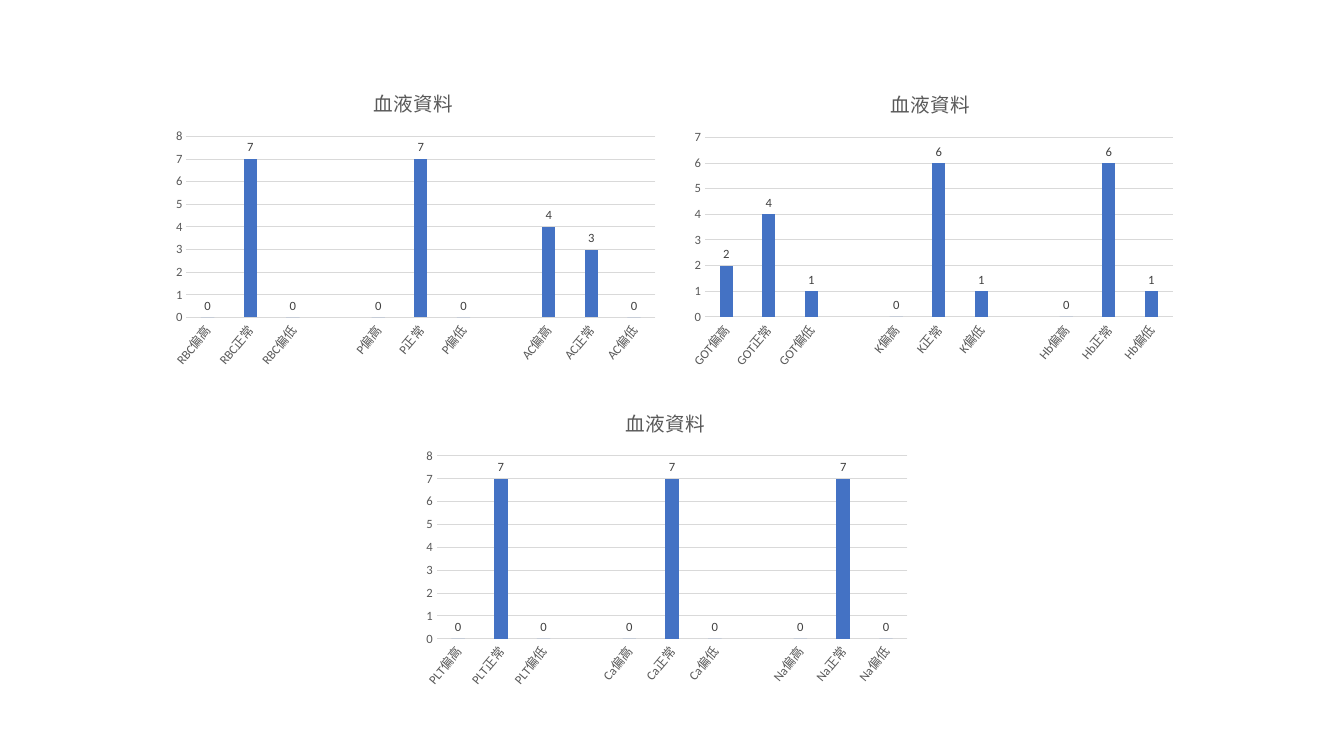
from dataclasses import dataclass
from itertools import product

from pptx import Presentation
from pptx.chart.data import CategoryChartData as ChartData
from pptx.dml.color import RGBColor as Rgb
from pptx.enum.chart import XL_CHART_TYPE as Kind
from pptx.enum.chart import XL_LABEL_POSITION as Spot
from pptx.enum.chart import XL_TICK_MARK as Tick
from pptx.util import Inches, Pt


@dataclass(frozen=True)
class Theme:
    """Colours, font, type sizes and label tilt of the slide."""
    face: str = "Calibri"
    bar: str = "4472C4"
    grid: str = "D9D9D9"
    text: str = "595959"
    label: str = "404040"
    head: float = 14
    base: float = 10
    small: float = 9
    tilt: int = -50


THEME = Theme()
SIZE = (13.33, 7.5)
CHART = (5, 3)
TITLE = "血液資料"
LEVELS = ("偏高", "正常", "偏低")
PANELS = (
    ((1.6, 0.71), {"RBC": (0, 7, 0), "P": (0, 7, 0), "AC": (4, 3, 0)}),
    ((6.73, 0.72), {"GOT": (2, 4, 1), "K": (0, 6, 1), "Hb": (0, 6, 1)}),
    ((4.1, 3.88), {"PLT": (0, 7, 0), "Ca": (0, 7, 0), "Na": (0, 7, 0)}),
)


def style(font, size, color):
    """Set the face, size and colour of a font."""
    font.name, font.size, font.bold = THEME.face, Pt(size), False
    font.color.rgb = Rgb.from_string(color)


def rule(line):
    """Draw a line in the thin grid style."""
    line.color.rgb = Rgb.from_string(THEME.grid)
    line.width = Pt(0.75)


def table(tests):
    """Turn tests into chart data, with an empty slot between tests."""
    data = ChartData()
    names = [test + level for test, level in product(tests, LEVELS)]
    counts = [count for row in tests.values() for count in row]
    step = len(LEVELS)
    for start in range(step, len(names), step)[::-1]:
        names.insert(start, "")
        counts.insert(start, None)
    data.categories = names
    data.add_series("Series 1", counts)
    return data


def axes(chart):
    """Format both axes and the gridlines."""
    cat, val = chart.category_axis, chart.value_axis
    for axis in (cat, val):
        axis.major_tick_mark = axis.minor_tick_mark = Tick.NONE
        style(axis.tick_labels.font, THEME.small, THEME.text)
        axis.format.line.fill.background()
    rule(cat.format.line)
    cat._element.txPr.bodyPr.set("rot", str(THEME.tilt * 60000))
    val.has_major_gridlines = True
    rule(val.major_gridlines.format.line)


def bars(plot):
    """Format the bars and their value labels."""
    plot.gap_width, plot.overlap = 219, -27
    plot.vary_by_categories = False
    fill = plot.series[0].format.fill
    fill.solid()
    fill.fore_color.rgb = Rgb.from_string(THEME.bar)
    labels = plot.series[0].data_labels
    labels.show_value = True
    labels.position = Spot.OUTSIDE_END
    style(labels.font, THEME.small, THEME.label)


def panel(slide, box, tests):
    """Place one titled bar chart in the given box."""
    place = [Inches(part) for part in box]
    frame = slide.shapes.add_chart(Kind.COLUMN_CLUSTERED, *place, table(tests))
    chart = frame.chart
    chart.has_legend = False
    style(chart.font, THEME.base, "000000")
    chart.has_title = True
    run = chart.chart_title.text_frame.paragraphs[0].add_run()
    run.text = TITLE
    style(run.font, THEME.head, THEME.text)
    chart.chart_title.include_in_layout = False
    axes(chart)
    bars(chart.plots[0])


def main():
    """Build the slide and save it."""
    deck = Presentation()
    deck.slide_width, deck.slide_height = map(Inches, SIZE)
    slide = deck.slides.add_slide(deck.slide_layouts.get_by_name("Blank"))
    for spot, tests in PANELS:
        panel(slide, spot + CHART, tests)
    deck.save("out.pptx")


if __name__ == "__main__":
    main()
